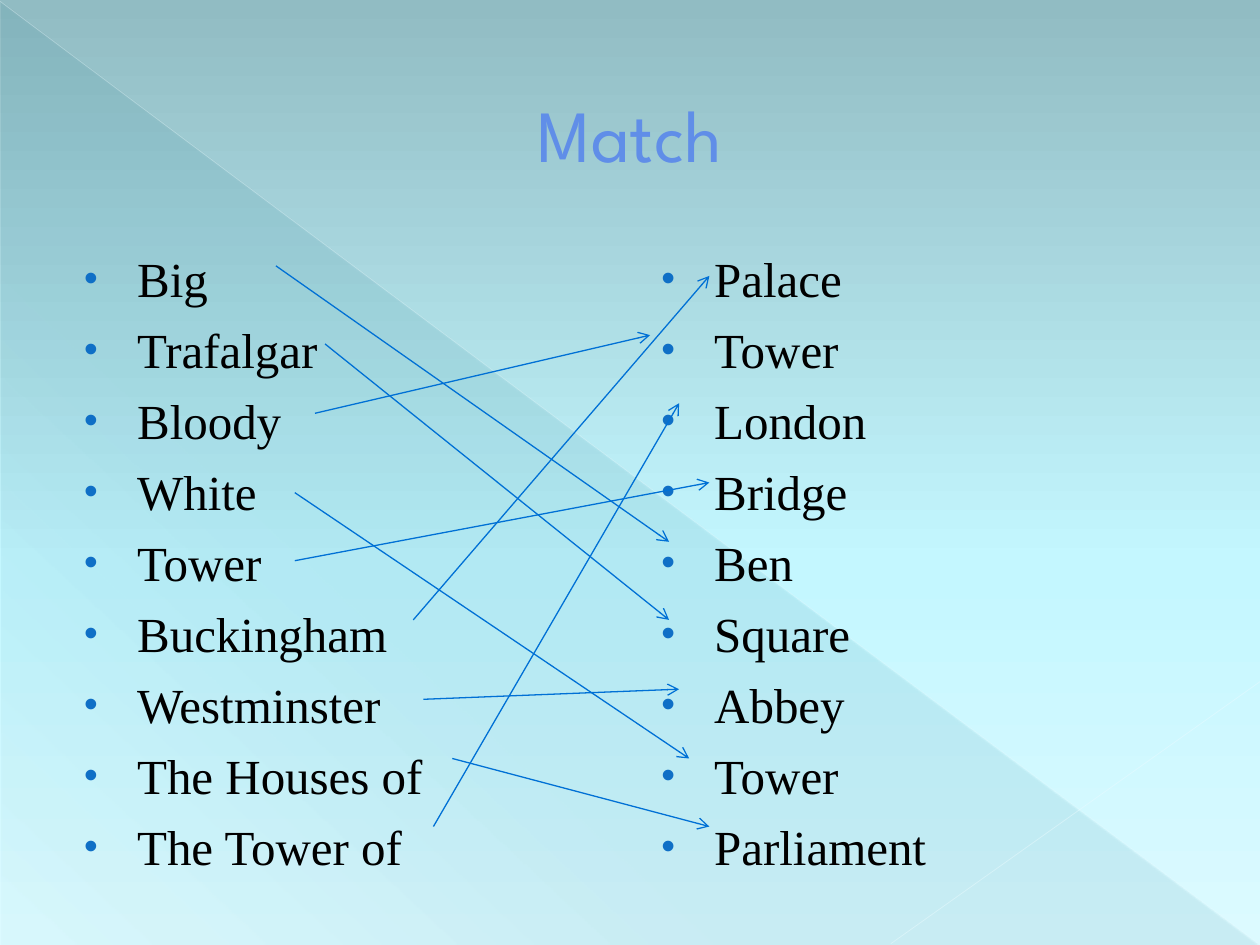
import pptx
import pptx.dml.color
import pptx.enum.shapes
import pptx.enum.text
import pptx.oxml
import pptx.oxml.ns
import pptx.util
from pptx.util import Inches

LEFT_WORDS = ["Big", "Trafalgar", "Bloody", "White", "Tower", "Buckingham",
              "Westminster", "The Houses of", "The Tower of"]
RIGHT_WORDS = ["Palace", "Tower", "London", "Bridge", "Ben", "Square",
               "Abbey", "Tower", "Parliament"]
MATCHES = [
    ((2.19, 2.11), (5.31, 4.3)),
    ((2.58, 2.73), (5.31, 4.92)),
    ((2.5, 3.28), (5.16, 2.66)),
    ((2.34, 3.91), (5.47, 6.02)),
    ((2.34, 4.45), (5.63, 3.83)),
    ((3.28, 4.92), (5.63, 2.19)),
    ((3.36, 5.55), (5.39, 5.47)),
    ((3.59, 6.02), (5.63, 6.56)),
    ((3.44, 6.56), (5.39, 3.2)),
]


def color(hex_text):
    return pptx.dml.color.RGBColor.from_string(hex_text)


def add_xml(parent, tag, position=None, **attributes):
    """Add a drawing element at the end of parent, or at position."""
    child = pptx.oxml.parse_xml(f"<a:{tag} {pptx.oxml.ns.nsdecls('a')}/>")
    for name, value in attributes.items():
        child.set(name, str(value))
    parent.insert(len(parent) if position is None else position, child)
    return child


def add_color(parent, hex_text, opacity=100):
    node = add_xml(parent, "srgbClr", val=hex_text)
    if opacity < 100:
        add_xml(node, "alpha", val=opacity * 1000)


def set_gradient(fill, owner, stops, angle):
    """Give owner's fill the (percent, colour, opacity) stops."""
    fill.gradient()
    gradient = next(owner.iter(pptx.oxml.ns.qn("a:gradFill")))
    for child in list(gradient):
        gradient.remove(child)
    stop_list = add_xml(gradient, "gsLst")
    for percent, hex_text, opacity in stops:
        stop = add_xml(stop_list, "gs", pos=percent * 1000)
        add_color(stop, hex_text, opacity)
    add_xml(gradient, "lin", ang=angle * 60000, scaled=0)


def add_line(page, start, end, hex_text, width, opacity=100, arrow=False):
    line = page.shapes.add_connector(
        pptx.enum.shapes.MSO_CONNECTOR.STRAIGHT,
        *(Inches(value) for value in start + end))
    line.line.color.rgb = color(hex_text)
    line.line.width = pptx.util.Pt(width)
    outline = line.line._get_or_add_ln()
    if opacity < 100:
        add_xml(outline[0][0], "alpha", val=opacity * 1000)
    if arrow:
        add_xml(outline, "tailEnd", type="arrow")
    add_xml(line._element.spPr, "effectLst")


def add_text(page, area, lines, font, size, hex_text, align="LEFT",
             anchor="TOP", top_inset=0.05, space_before=0, bullet=None):
    box = page.shapes.add_textbox(*(Inches(value) for value in area))
    frame = box.text_frame
    frame.word_wrap = True
    frame.margin_top = Inches(top_inset)
    frame.vertical_anchor = pptx.enum.text.MSO_ANCHOR[anchor]
    for index, line in enumerate(lines):
        para = frame.add_paragraph() if index else frame.paragraphs[0]
        para.alignment = pptx.enum.text.PP_ALIGN[align]
        para.space_before = pptx.util.Pt(space_before if index else 0)
        if bullet:
            set_bullet(para, bullet)
        span = para.add_run()
        span.text = line
        span.font.name = font
        span.font.size = pptx.util.Pt(size)
        span.font.color.rgb = color(hex_text)
    return box


def set_bullet(para, hex_text):
    properties = para._p.get_or_add_pPr()
    properties.set("marL", str(Inches(0.49)))
    properties.set("indent", str(Inches(-0.42)))
    add_color(add_xml(properties, "buClr"), hex_text)
    add_xml(properties, "buSzPct", val=80000)
    add_xml(properties, "buFont", typeface="Arial")
    add_xml(properties, "buChar", char="•")


def add_backdrop(page, area):
    set_gradient(page.background.fill, page.element,
                 [(0, "91BCC3", 100), (60, "C4F7FF", 100),
                  (100, "DCFAFF", 100)], 90)
    triangle = page.shapes.add_shape(
        pptx.enum.shapes.MSO_SHAPE.RIGHT_TRIANGLE,
        *(Inches(value) for value in area))
    triangle.shadow.inherit = False
    triangle.line.fill.background()
    set_gradient(triangle.fill, triangle._element,
                 [(0, "04617B", 10), (70, "04617B", 8),
                  (100, "04617B", 1)], 133)
    add_line(page, (0, 0.01), (9.99, 7.49), "E9FCFF", 0.39, opacity=35)
    add_line(page, (10, 5.41), (7.07, 7.49), "EBFCFF", 0.47, opacity=45)


def add_title(page, area):
    box = add_text(page, area, ["Match"], "League Spartan", 42, "608EE8",
                   align="CENTER", anchor="MIDDLE")
    span = box.text_frame.paragraphs[0].runs[0]
    outline = add_xml(span.font._element, "ln", position=0,
                      w=pptx.util.Pt(0.5))
    add_color(add_xml(outline, "solidFill"), "0A4D89")


def add_word_list(page, area, words):
    add_text(page, area, words, "Times New Roman", 28, "000000",
             top_inset=0.09, space_before=7, bullet="0F6FC6")


def main():
    deck = pptx.Presentation()
    deck.slide_width, deck.slide_height = Inches(10), Inches(7.5)
    page = deck.slides.add_slide(deck.slide_layouts[6])
    add_backdrop(page, (0.01, 0.02, 9.98, 7.48))
    add_title(page, (0.5, 0.29, 9, 1.53))
    for left, words in ((0.5, LEFT_WORDS), (5.08, RIGHT_WORDS)):
        add_word_list(page, (left, 1.88, 4.42, 4.95), words)
    for start, end in MATCHES:
        add_line(page, start, end, "0070D5", 0.75, arrow=True)
    deck.save("out.pptx")


if __name__ == "__main__":
    main()
